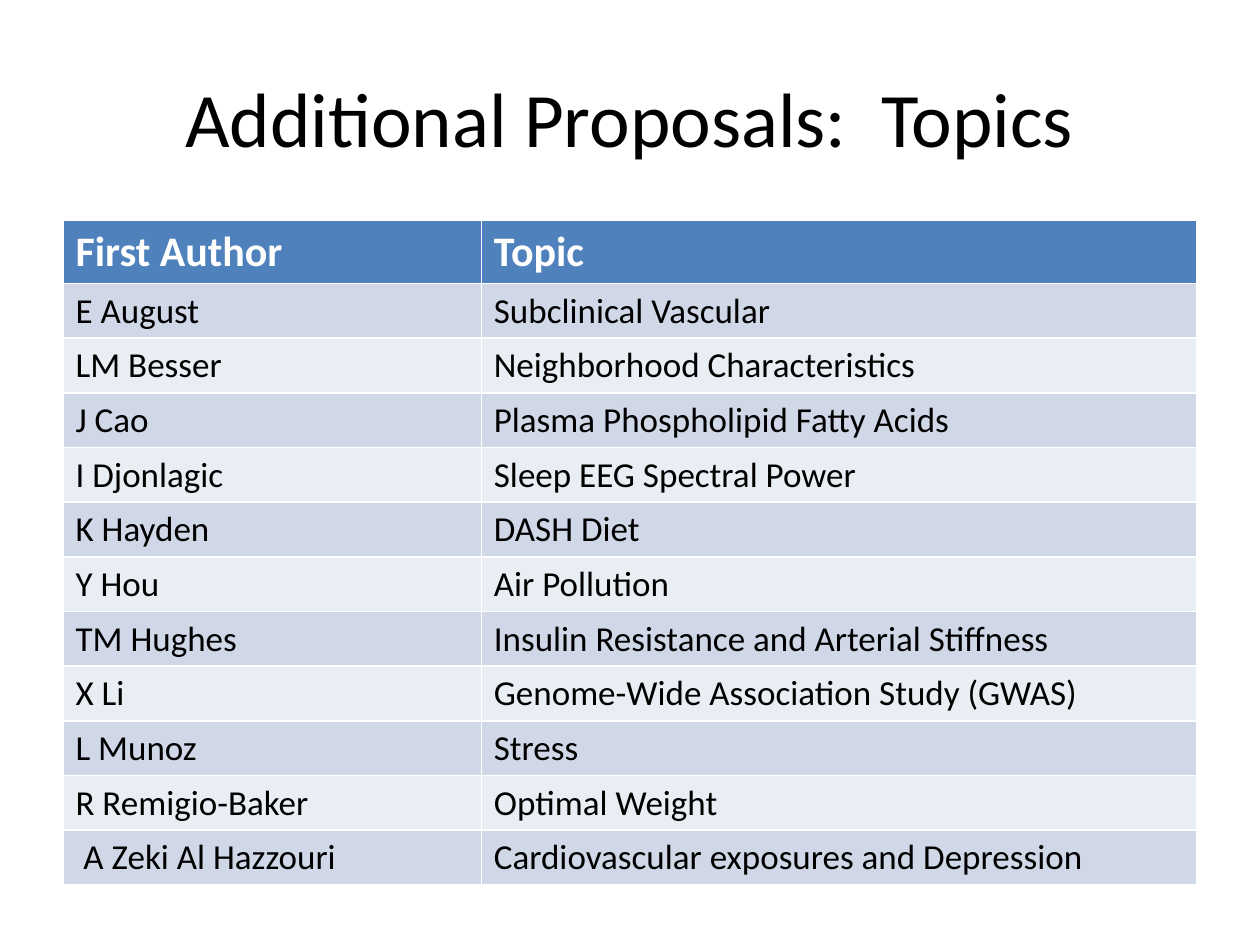
from typing import NamedTuple

from pptx import Presentation
from pptx.dml.color import RGBColor
from pptx.enum import text
from pptx.util import Inches, Pt

FONT = "Calibri"
BLACK, WHITE = "000000", "FFFFFF"
HEADER_FILL = "4F81BD"
BAND_FILLS = ("E9EDF4", "D0D8E8")


class Proposal(NamedTuple):
    author: str
    topic: str


HEADINGS = Proposal("First Author", "Topic")
PROPOSALS = [
    Proposal("E August", "Subclinical Vascular"),
    Proposal("LM Besser", "Neighborhood Characteristics"),
    Proposal("J Cao", "Plasma Phospholipid Fatty Acids"),
    Proposal("I Djonlagic", "Sleep EEG Spectral Power"),
    Proposal("K Hayden", "DASH Diet"),
    Proposal("Y Hou", "Air Pollution"),
    Proposal("TM Hughes", "Insulin Resistance and Arterial Stiffness"),
    Proposal("X Li", "Genome-Wide Association Study (GWAS)"),
    Proposal("L Munoz", "Stress"),
    Proposal("R Remigio-Baker", "Optimal Weight"),
    Proposal(" A Zeki Al Hazzouri", "Cardiovascular exposures and Depression"),
]


def rgb(color: str) -> RGBColor:
    return RGBColor.from_string(color)


def write(frame, words: str, size: int, color: str, bold: bool = False) -> None:
    frame.text = words
    font = frame.paragraphs[0].font
    font.name, font.size, font.bold = FONT, Pt(size), bold
    font.color.rgb = rgb(color)


def add_title(slide, words: str) -> None:
    title = slide.shapes.add_textbox(Inches(0.5), Inches(0.3), Inches(9), Inches(1.25))
    frame = title.text_frame
    frame.word_wrap = True
    frame.vertical_anchor = text.MSO_ANCHOR.MIDDLE
    write(frame, words, 44, BLACK)
    frame.paragraphs[0].alignment = text.PP_ALIGN.CENTER


def add_proposals(slide, proposals: list[Proposal]) -> None:
    """Draw the banded table; its default style supplies the white rules."""
    entries = [HEADINGS, *proposals]
    height = Inches(5.27)
    holder = slide.shapes.add_table(
        len(entries), len(HEADINGS), Inches(0.5), Inches(1.75), Inches(9), height
    )
    table = holder.table
    for column, width in zip(table.columns, (3.32, 5.68)):
        column.width = Inches(width)
    for index, (row, entry) in enumerate(zip(table.rows, entries)):
        row.height = Inches(0.41)
        is_header = index == 0
        fill = HEADER_FILL if is_header else BAND_FILLS[index % 2]
        size, color = (24, WHITE) if is_header else (20, BLACK)
        for cell, words in zip(row.cells, entry):
            cell.fill.solid()
            cell.fill.fore_color.rgb = rgb(fill)
            write(cell.text_frame, words, size, color, is_header)
    holder.height = height


def main() -> None:
    deck = Presentation()
    deck.slide_width, deck.slide_height = Inches(10), Inches(7.5)
    slide = deck.slides.add_slide(deck.slide_layouts[6])
    add_title(slide, "Additional Proposals:  Topics")
    add_proposals(slide, PROPOSALS)
    deck.save("out.pptx")


if __name__ == "__main__":
    main()
